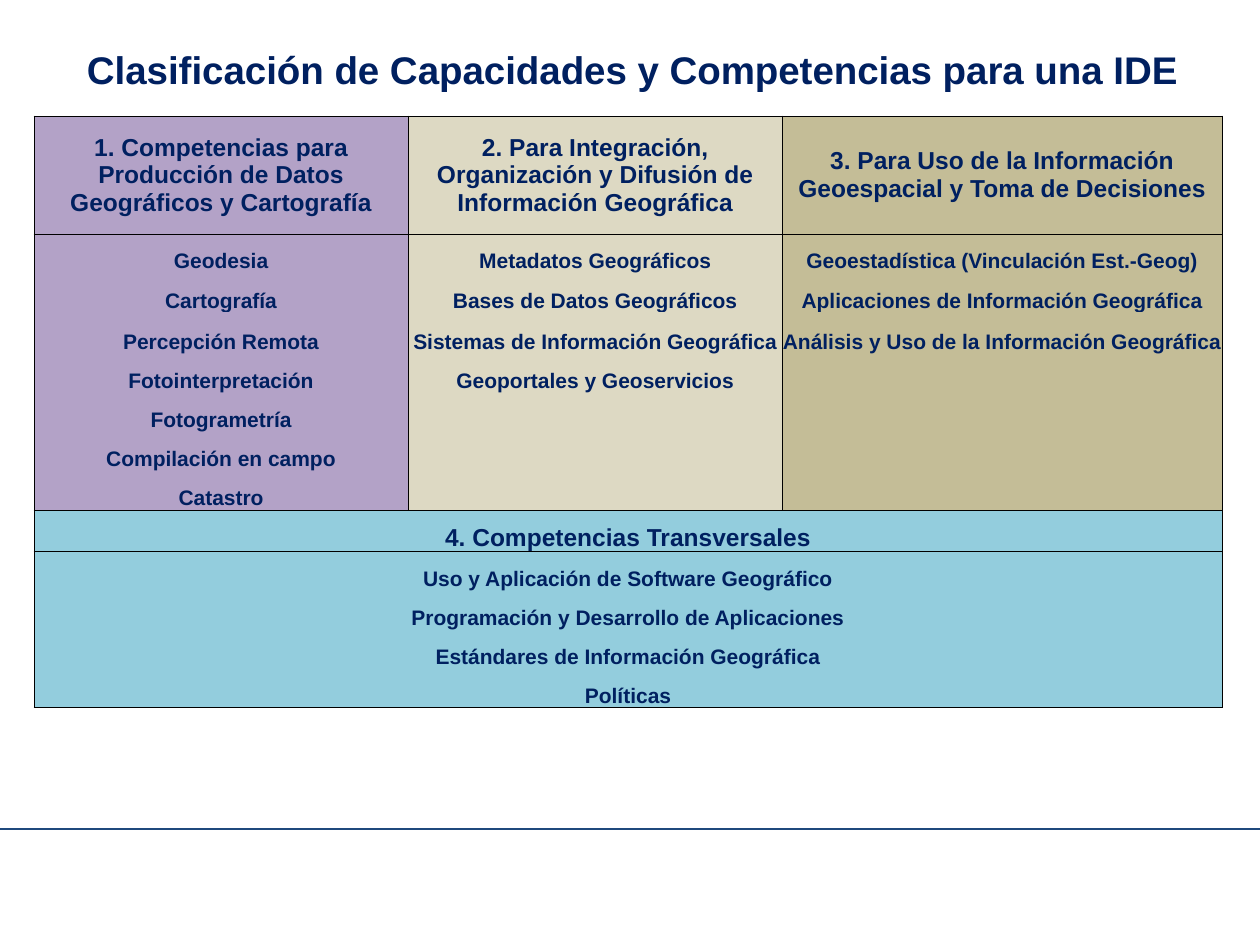
from typing import NamedTuple

from lxml.etree import SubElement
from pptx import Presentation
from pptx.dml.color import RGBColor
from pptx.enum.shapes import MSO_CONNECTOR
from pptx.enum.text import MSO_ANCHOR, PP_ALIGN
from pptx.oxml.ns import qn
from pptx.util import Inches, Pt

NAVY, BLACK, BLUE = "002060", "000000", "1F497D"
WIDTHS = [2.97, 2.97, 3.49]
HEAD, ROW, TALL = 0.94, 0.31, 0.33
DEPTH = 7  # item rows under the three upper headings


class Group(NamedTuple):
    col: int
    top: int
    span: int
    depth: int
    fill: str
    head: str
    items: list[str]


GROUPS = [
    Group(0, 0, 1, DEPTH, "B3A2C7",
          "1. Competencias para Producción de Datos Geográficos y Cartografía",
          ["Geodesia", "Cartografía", "Percepción Remota", "Fotointerpretación",
           "Fotogrametría", "Compilación en campo", "Catastro"]),
    Group(1, 0, 1, DEPTH, "DDD9C3",
          "2. Para Integración, Organización y Difusión de Información Geográfica",
          ["Metadatos Geográficos", "Bases de Datos Geográficos",
           "Sistemas de Información Geográfica", "Geoportales y Geoservicios"]),
    Group(2, 0, 1, DEPTH, "C4BD97",
          "3. Para Uso de la Información Geoespacial y Toma de Decisiones",
          ["Geoestadística (Vinculación Est.-Geog)",
           "Aplicaciones de Información Geográfica",
           "Análisis y Uso de la Información Geográfica"]),
    Group(0, DEPTH + 1, 3, 4, "93CDDD", "4. Competencias Transversales",
          ["Uso y Aplicación de Software Geográfico",
           "Programación y Desarrollo de Aplicaciones",
           "Estándares de Información Geográfica", "Políticas"]),
]


def color(code: str) -> RGBColor:
    return RGBColor.from_string(code)


def style(para, size: float) -> None:
    for run in para.runs:
        font = run.font
        font.name, font.size, font.bold = "Arial", Pt(size), True
        font.color.rgb = color(NAVY)


def border(cell, sides: str) -> None:
    """Rule the named sides and leave the others open."""
    props = cell._tc.get_or_add_tcPr()
    for side in "LRTB":
        line = SubElement(props, qn(f"a:ln{side}"), w=str(Pt(0.5)))
        if side in sides:
            fill = SubElement(line, qn("a:solidFill"))
            SubElement(fill, qn("a:srgbClr"), val=BLACK)
        else:
            SubElement(line, qn("a:noFill"))


def paint(cell, text: str, size: float, fill: str, sides: str) -> None:
    border(cell, sides)
    cell.fill.solid()
    cell.fill.fore_color.rgb = color(fill)
    cell.margin_left = cell.margin_right = 0
    cell.margin_top = cell.margin_bottom = 0
    cell.vertical_anchor = MSO_ANCHOR.BOTTOM
    if text:
        cell.text_frame.text = text
        para = cell.text_frame.paragraphs[0]
        para.alignment = PP_ALIGN.CENTER
        style(para, size)


def draw_group(table, group: Group) -> None:
    last = group.col + group.span - 1
    for step in range(group.depth + 1):
        row = group.top + step
        if group.span > 1:
            table.cell(row, group.col).merge(table.cell(row, last))
        sides = "LR" + "T" * (step < 2) + "B" * (step in (0, group.depth))
        texts = [group.head] + group.items
        text = texts[step] if step < len(texts) else ""
        for col in range(group.col, last + 1):
            paint(table.cell(row, col), text if col == group.col else "",
                  12 if step else 14, group.fill, sides)
    if group.top == 0:
        table.cell(0, group.col).vertical_anchor = MSO_ANCHOR.MIDDLE


def main() -> None:
    deck = Presentation()
    deck.slide_width, deck.slide_height = Inches(10), Inches(7.5)
    slide = deck.slides.add_slide(deck.slide_layouts[5])

    # Footer rule
    rule = slide.shapes.add_connector(
        MSO_CONNECTOR.STRAIGHT, 0, Inches(6.58), Inches(10), Inches(6.58))
    rule.line.color.rgb = color(BLUE)
    rule.line.width = Pt(0.75)
    SubElement(rule._element.spPr, qn("a:effectLst"))

    # Title
    title = slide.shapes.title
    title.left, title.top = Inches(0.59), Inches(0.29)
    title.width, title.height = Inches(8.98), Inches(0.48)
    frame = title.text_frame
    frame.text = "Clasificación de Capacidades y Competencias para una IDE"
    frame.vertical_anchor = MSO_ANCHOR.TOP
    para = frame.paragraphs[0]
    para.alignment = PP_ALIGN.JUSTIFY
    para.line_spacing, para.space_after = 1.07, Pt(8)
    style(para, 22)

    # Table of skills
    rows = [HEAD] + [ROW] * 12
    rows[3] = rows[8] = TALL
    table = slide.shapes.add_table(
        len(rows), len(WIDTHS), Inches(0.27), Inches(0.92),
        Inches(sum(WIDTHS)), Inches(sum(rows))).table
    table.first_row = table.horz_banding = False
    for col, width in zip(table.columns, WIDTHS):
        col.width = Inches(width)
    for row, height in zip(table.rows, rows):
        row.height = Inches(height)
    for group in GROUPS:
        draw_group(table, group)

    deck.save("out.pptx")


if __name__ == "__main__":
    main()
